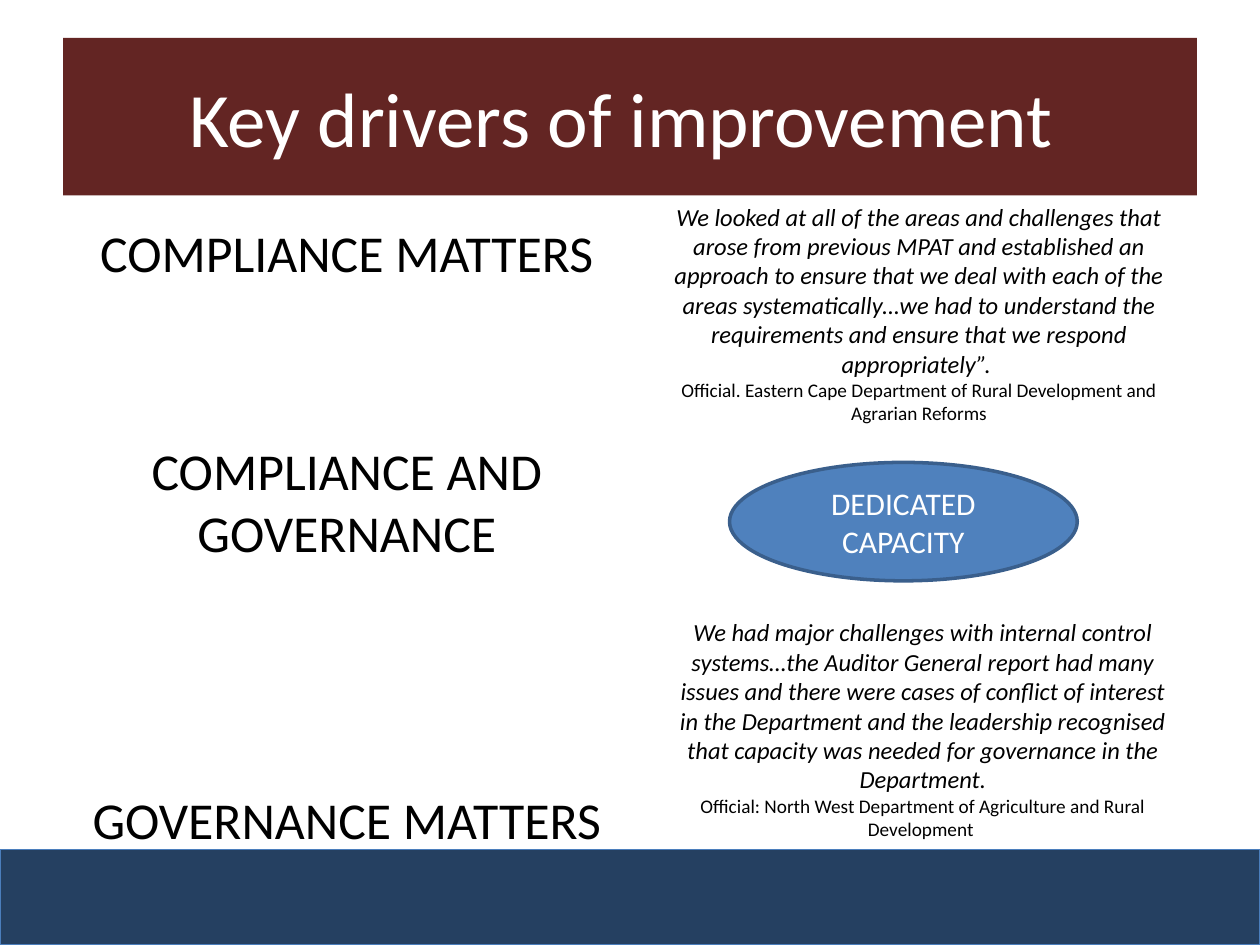
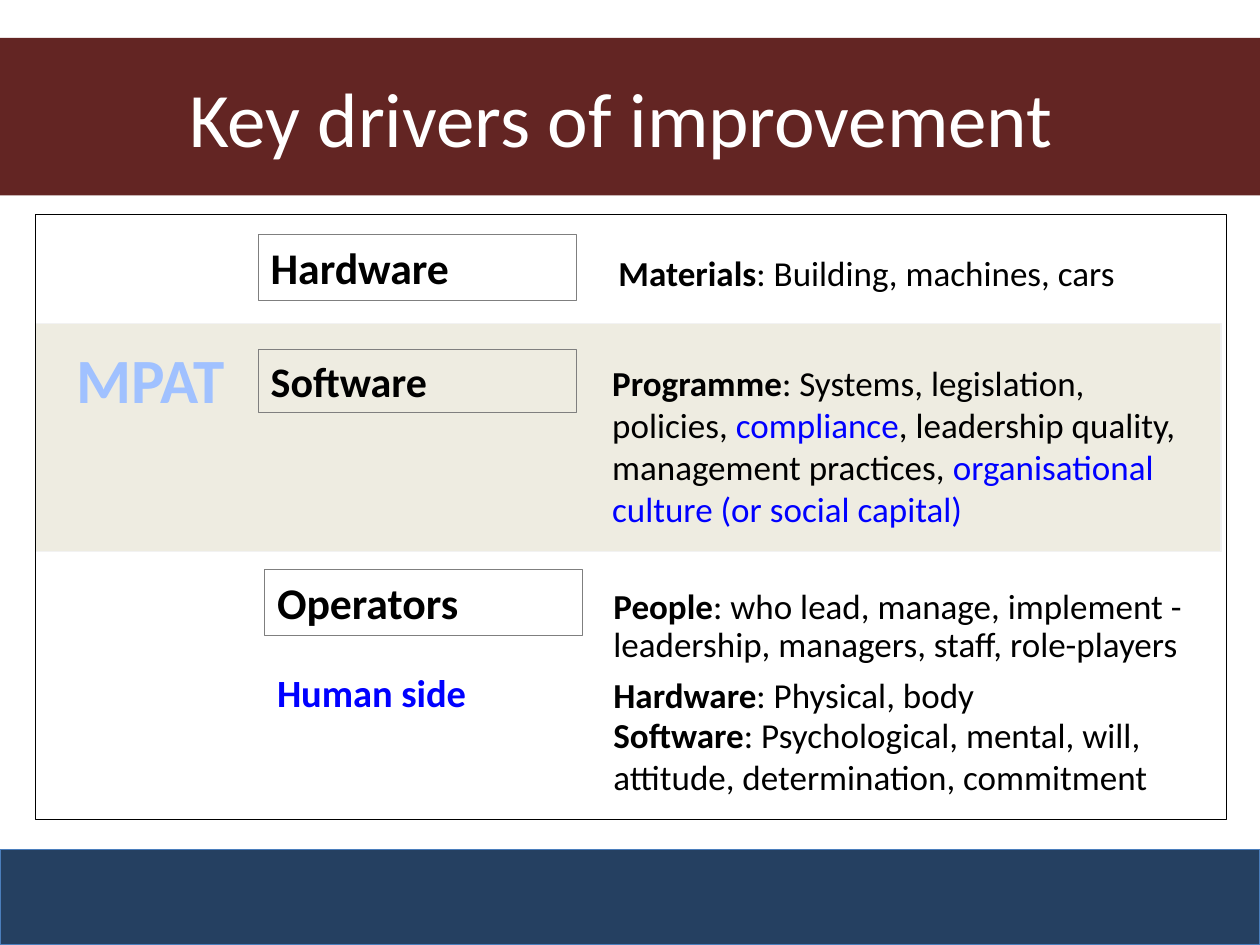
"""Two slides on the key drivers of improvement, with a shared title band and footer."""
from pptx import Presentation
from pptx.dml.color import RGBColor
from pptx.enum.shapes import MSO_SHAPE
from pptx.enum.text import MSO_ANCHOR, PP_ALIGN
from pptx.util import Inches, Pt

RECT, OVAL = MSO_SHAPE.RECTANGLE, MSO_SHAPE.OVAL
LEFT, CENTER = PP_ALIGN.LEFT, PP_ALIGN.CENTER
TOP, MIDDLE = MSO_ANCHOR.TOP, MSO_ANCHOR.MIDDLE

FONT = "Calibri"
WIDTH, HEIGHT = 10, 7.5
COLORS = {
    "band": "632523", "footer": "254061", "footer line": "4B7EBC",
    "oval": "4F81BD", "oval line": "3A5F8C", "panel": "EEECE1",
    "panel line": "F2F2F2", "label line": "7F7F7F", "white": "FFFFFF",
    "black": "000000", "blue": "0000FF", "pale blue": "A0C1FF",
}
TITLE = "Key drivers of improvement "

MATTERS = [
    ("COMPLIANCE MATTERS", 0),
    ("COMPLIANCE AND GOVERNANCE", 89),
    ("GOVERNANCE MATTERS", 128.5),
]
QUOTES = [
    ((5.11, 1.55, 4.37, 1.88),
     "We looked at all of the areas and challenges that arose from previous MPAT and "
     "established an approach to ensure that we deal with each of the areas "
     "systematically…we had to understand the requirements and ensure that we respond "
     "appropriately”. ",
     "Official. Eastern Cape Department of Rural Development and Agrarian Reforms"),
    ((5.24, 4.85, 4.17, 1.88),
     "We had major challenges with internal control systems…the Auditor General report "
     "had many issues and there were cases of conflict of interest in the Department and "
     "the leadership recognised that capacity was needed for governance in the Department.",
     "Official: North West Department of Agriculture and Rural Development "),
]
CAPACITY = "DEDICATED CAPACITY"

LABEL_WIDTH, DETAIL_WIDTH = 2.52, 4.75
LABELS = [
    ("Hardware", 2.05, 1.86, 0.52, 25),
    ("Software", 2.05, 2.77, 0.5, 24),
    ("Operators", 2.1, 4.52, 0.52, 25),
]
DETAILS = [
    (4.81, 1.95, 0.44, [[("Materials", "bold"), (": Building, machines, cars", "")]]),
    (4.76, 2.82, 1.45, [
        [("Programme", "bold"), (": Systems, legislation, policies, ", ""),
         ("compliance", "blue"), (", leadership quality,", "")],
        [("management practices, ", ""),
         ("organisational culture (or social capital)", "blue")]]),
    (4.77, 4.59, 0.44, [[("People", "bold"), (": who lead, manage, implement -", "")]]),
    (4.77, 4.89, 0.44, [[("leadership, managers, staff, role-players", "")]]),
    (4.77, 5.3, 0.44, [[("Hardware", "bold"), (": Physical, body", "")]]),
    (4.77, 5.61, 0.77, [
        [("Software", "bold"), (": Psychological, mental, will,", "")],
        [("attitude, determination, commitment", "")]]),
]


def rgb(name):
    return RGBColor.from_string(COLORS[name])


def style(run, size, color="black", bold=False, italic=False):
    font = run.font
    font.name, font.size, font.bold, font.italic = FONT, Pt(size), bold, italic
    font.color.rgb = rgb(color)


def write(shape, paragraphs, align=LEFT, anchor=TOP):
    """Fill a shape with paragraphs, each a list of (text, style keywords) runs."""
    frame = shape.text_frame
    frame.word_wrap, frame.vertical_anchor = True, anchor
    for index, runs in enumerate(paragraphs):
        paragraph = frame.add_paragraph() if index else frame.paragraphs[0]
        paragraph.alignment = align
        for text, look in runs:
            run = paragraph.add_run()
            run.text = text
            style(run, **look)
    return frame


def add_box(slide, box, fill=None, line=None, width=0.75, kind=RECT):
    shape = slide.shapes.add_shape(kind, *map(Inches, box))
    shape.shadow.inherit = False
    if fill:
        shape.fill.solid()
        shape.fill.fore_color.rgb = rgb(fill)
    else:
        shape.fill.background()
    shape.line.color.rgb = rgb(line)
    shape.line.width = Pt(width)
    return shape


def add_text(slide, box, paragraphs, align=LEFT):
    return write(slide.shapes.add_textbox(*map(Inches, box)), paragraphs, align)


def add_slide(deck, band_left):
    slide = deck.slides.add_slide(deck.slide_layouts[5])
    add_box(slide, (0, 6.74, WIDTH, HEIGHT - 6.74), "footer", "footer line")
    band = slide.shapes.title
    band.left, band.top = Inches(band_left), Inches(0.3)
    band.width, band.height = Inches(WIDTH - 2 * band_left), Inches(1.25)
    band.fill.solid()
    band.fill.fore_color.rgb = rgb("band")
    write(band, [[(TITLE, dict(size=44, color="white"))]], CENTER, MIDDLE)
    return slide


def build_matters(deck):
    slide = add_slide(deck, 0.5)
    matters = add_text(slide, (0.51, 1.7, 4.49, 4.95),
                       [[(text, dict(size=29.6))] for text, _ in MATTERS], CENTER)
    for paragraph, (_, gap) in zip(matters.paragraphs, MATTERS):
        paragraph.space_before = Pt(gap)
    for box, quote, official in QUOTES:
        add_text(slide, box, [[(quote, dict(size=14, italic=True))],
                              [(official, dict(size=11))]], CENTER)
    oval = add_box(slide, (5.79, 3.67, 2.76, 0.94), "oval", "oval line", 2, OVAL)
    write(oval, [[(CAPACITY, dict(size=18, color="white"))]], CENTER, MIDDLE)


def build_layers(deck):
    slide = add_slide(deck, 0)
    add_box(slide, (0.28, 2.57, 9.41, 1.81), "panel", "panel line")
    for name, left, top, height, size in LABELS:
        label = add_box(slide, (left, top, LABEL_WIDTH, height), None, "label line", 0.25)
        write(label, [[(name, dict(size=size, bold=True))]])
    for left, top, height, lines in DETAILS:
        add_text(slide, (left, top, DETAIL_WIDTH, height), [
            [(text, dict(size=20, bold=look == "bold",
                         color="blue" if look == "blue" else "black"))
             for text, look in runs] for runs in lines])
    add_text(slide, (0.46, 2.65, 1.47, 0.71),
             [[("MPAT", dict(size=36, color="pale blue", bold=True))]], CENTER)
    add_text(slide, (2.1, 5.26, LABEL_WIDTH, 0.47),
             [[("Human side", dict(size=22, color="blue", bold=True))]])
    add_box(slide, (0.28, 1.7, 9.45, 4.8), None, "black", 0.25)


def main():
    deck = Presentation()
    deck.slide_width, deck.slide_height = Inches(WIDTH), Inches(HEIGHT)
    build_matters(deck)
    build_layers(deck)
    deck.save("out.pptx")


if __name__ == "__main__":
    main()
